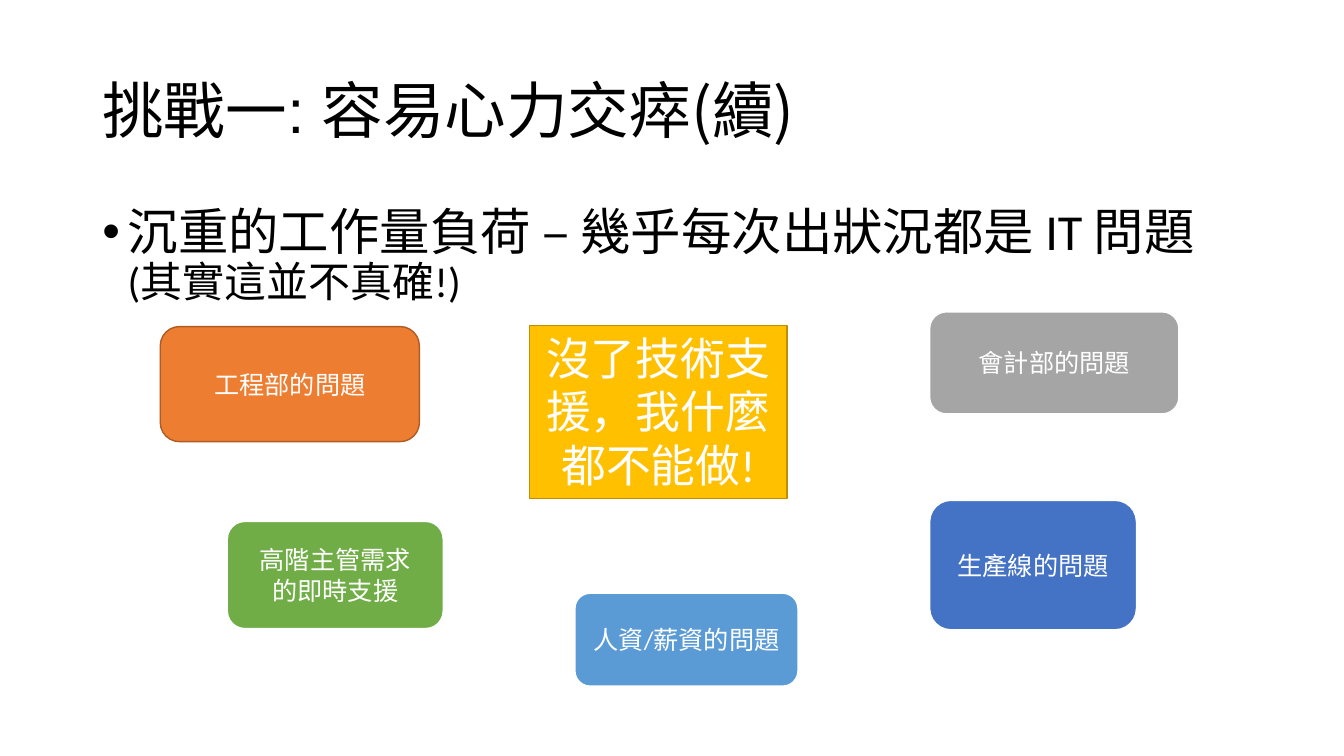
from lxml import etree
from pptx import Presentation
from pptx.dml.color import RGBColor
from pptx.enum.shapes import MSO_SHAPE
from pptx.enum.text import MSO_ANCHOR, MSO_AUTO_SIZE, PP_ALIGN
from pptx.oxml.ns import qn
from pptx.util import Cm, Pt

RECT, ROUND = MSO_SHAPE.RECTANGLE, MSO_SHAPE.ROUNDED_RECTANGLE
TOP, MIDDLE = MSO_ANCHOR.TOP, MSO_ANCHOR.MIDDLE
GROW, CENTER = MSO_AUTO_SIZE.SHAPE_TO_FIT_TEXT, PP_ALIGN.CENTER

BLACK = RGBColor(0x00, 0x00, 0x00)
WHITE = RGBColor(0xFF, 0xFF, 0xFF)
GOLD = RGBColor(0xFF, 0xC0, 0x00)
OCHRE = RGBColor(0xBD, 0x8E, 0x00)
GRAY = RGBColor(0xA5, 0xA5, 0xA5)
ORANGE = RGBColor(0xED, 0x7D, 0x31)
RUST = RGBColor(0xAF, 0x5C, 0x24)
GREEN = RGBColor(0x70, 0xAD, 0x47)
SKY = RGBColor(0x5B, 0x9B, 0xD5)
BLUE = RGBColor(0x44, 0x72, 0xC4)

LATIN, HEAD, HAN = "Calibri", "Arial", "Noto Sans CJK SC"

ISSUES = [
    ((23.42, 7.85, 6.3, 2.59), GRAY, WHITE, 1.5, ["會計部的問題"]),
    ((4.04, 8.23, 6.53, 2.9), ORANGE, RUST, 1, ["工程部的問題"]),
    ((5.72, 13.13, 5.46, 2.72), GREEN, WHITE, 1.5, ["高階主管需求", "的即時支援"]),
    ((14.48, 14.94, 5.64, 2.36), SKY, WHITE, 1.5, ["人資/薪資的問題"]),
    ((23.42, 12.6, 5.23, 3.28), BLUE, WHITE, 1.5, ["生產線的問題"]),
]


def style(item, values):
    """Set each named attribute of an item."""
    for name, value in values.items():
        setattr(item, name, value)


def add_run(para, text, size, color, face=LATIN):
    """Add a run of text with Latin and Han fonts."""
    run = para.add_run()
    run.text = text
    style(run.font, {"size": Pt(size), "name": face})
    run.font.color.rgb = color
    etree.SubElement(run.font._element, qn("a:ea"), typeface=HAN)


def add_text(slide, box, anchor):
    """Add a wrapping text box and return its first paragraph."""
    frame = slide.shapes.add_textbox(*map(Cm, box)).text_frame
    style(frame, {"word_wrap": True, "vertical_anchor": anchor})
    para = frame.paragraphs[0]
    para.line_spacing = 0.9
    return para


def add_title(slide, box):
    """Write the slide heading."""
    para = add_text(slide, box, MIDDLE)
    add_run(para, "挑戰一: ", 44, BLACK, HEAD)
    add_run(para, "容易心力交瘁(續)", 44, BLACK, HAN)


def add_point(slide, box):
    """Write the bulleted statement."""
    para = add_text(slide, box, TOP)
    props = para._p.get_or_add_pPr()
    indent = Cm(0.64)
    props.set("marL", str(indent))
    props.set("indent", str(-indent))
    etree.SubElement(props, qn("a:buFont"), typeface=HEAD)
    etree.SubElement(props, qn("a:buChar"), char="•")
    add_run(para, "沉重的工作量負荷 – 幾乎每次出狀況都是 IT 問題 ", 36, BLACK)
    add_run(para, "(其實這並不真確!)", 30, BLACK)


def add_card(slide, box, fill, edge, width, lines, kind=ROUND, size=18, **frame):
    """Draw a filled card with centred white lines."""
    card = slide.shapes.add_shape(kind, *map(Cm, box))
    card.shadow.inherit = False
    card.fill.solid()
    card.fill.fore_color.rgb = fill
    card.line.color.rgb = edge
    card.line.width = Pt(width)
    text = card.text_frame
    style(text, {"word_wrap": True, "vertical_anchor": MIDDLE, **frame})
    for i, line in enumerate(lines):
        para = text.add_paragraph() if i else text.paragraphs[0]
        para.alignment = CENTER
        add_run(para, line, size, WHITE)


def main():
    """Build and save the slide."""
    deck = Presentation()
    style(deck, {"slide_width": Cm(33.87), "slide_height": Cm(19.05)})
    slide = deck.slides.add_slide(deck.slide_layouts[6])
    add_title(slide, (2.33, 1.02, 29.21, 3.68))
    add_point(slide, (2.33, 5.08, 29.21, 12.09))
    add_card(slide, (13.34, 8.2, 6.5, 4.37), GOLD, OCHRE, 1,
             ["沒了技術支援，我什麼都不能做!"], RECT, 32,
             vertical_anchor=TOP, auto_size=GROW)
    for issue in ISSUES:
        add_card(slide, *issue)
    deck.save("out.pptx")


if __name__ == "__main__":
    main()
